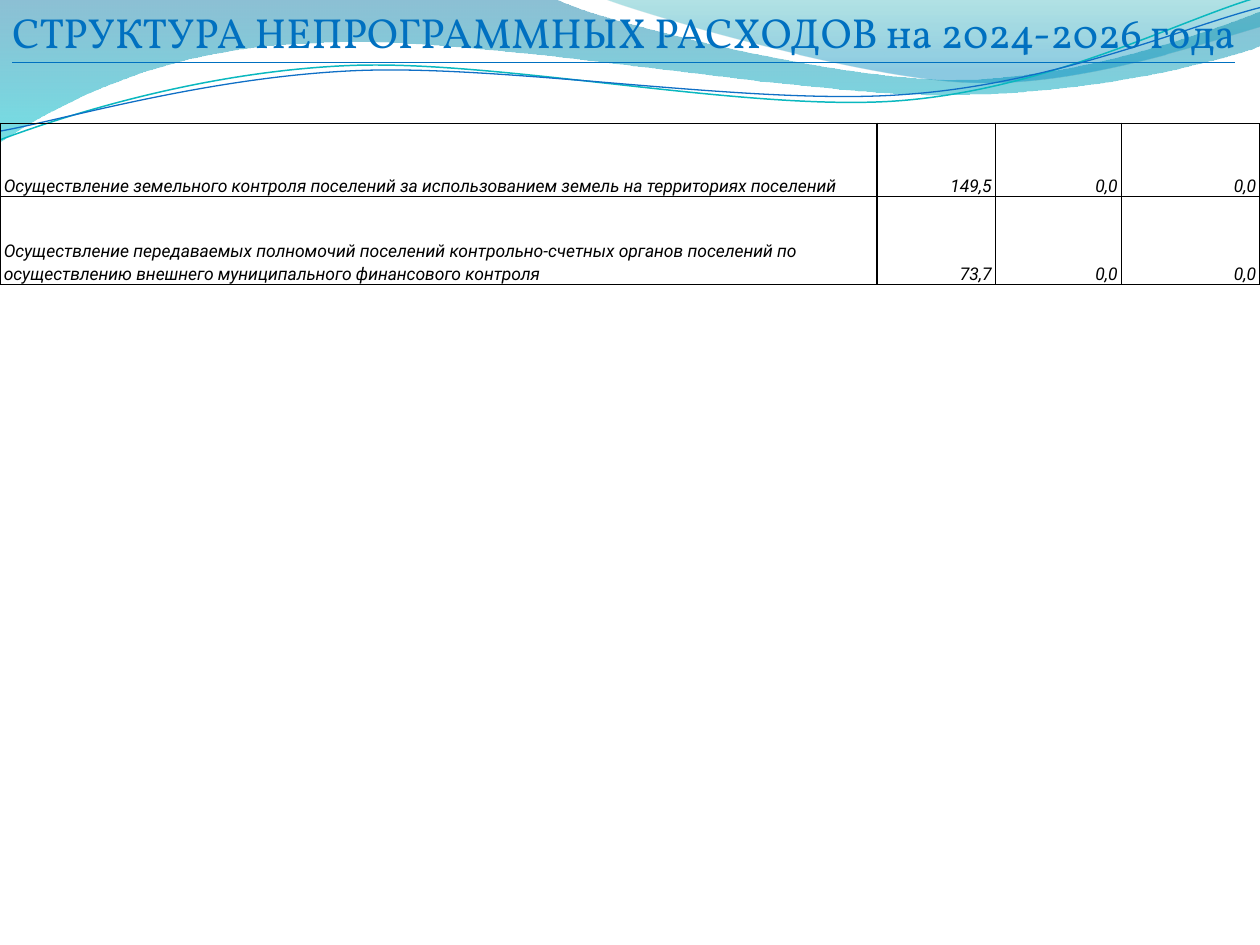
import math
from pptx import Presentation, util as u
from pptx.dml.color import RGBColor
from pptx.enum import text as t
from pptx.oxml import ns, xmlchemy as xml

PX = 9144
BLACK = RGBColor(0, 0, 0)
WHITE = RGBColor(255, 255, 255)
BLUE = RGBColor(0, 0x70, 0xC0)
TEAL = RGBColor(0x0A, 0xB8, 0xBF)
NAVY = RGBColor(0x0F, 0x6F, 0xC6)
DEEP = RGBColor(0, 0x74, 0xA1)
AQUA = RGBColor(0, 0xC6, 0xCF)
SEA = RGBColor(0, 0xA1, 0xA9)
SKY = RGBColor(0, 0x8B, 0xBF)

TILT = 357.3
BANDS = [
    ([(0, 0), (440, -1), (476, 17, 664, 63, 758, 63), (853, 63, 958, 26, 1000, 9),
      (1001, 36), (983, 44, 870, 76, 746, 75), (622, 75, 382, 28, 257, 34),
      (129, 36, 46, 83, -1, 113), (0, 0)], [(0, DEEP, 45), (1, AQUA, 55)]),
    ([(479, -1), (509, 11, 682, 62, 769, 65), (856, 69, 961, 32, 1000, 21),
      (1000, 0), (479, -1)], [(0, SEA, 30), (0.8, SKY, 45)]),
]
LINES = [
    ([(0, 111), (48, 93, 158, 57, 277, 52), (395, 47, 593, 89, 713, 80),
      (833, 71, 938, 15, 998, -2)], (499, 57), TEAL, 0.85),
    ([(0, 104), (47, 96, 164, 61, 283, 56), (403, 51, 597, 84, 717, 75),
      (836, 67, 941, 21, 1000, 6)], (499, 59), NAVY, 0.75),
]
TITLE = "СТРУКТУРА НЕПРОГРАММНЫХ РАСХОДОВ на 2024-2026 года"
COLS = [696, 94, 100, 110]
ROWS = [
    (58, None, ["Осуществление земельного контроля поселений за использованием земель "
                "на территориях поселений", "149,5", "0,0", "0,0"]),
    (70, WHITE, ["Осуществление передаваемых полномочий поселений контрольно-счетных "
                 "органов поселений по осуществлению внешнего муниципального "
                 "финансового контроля", "73,7", "0,0", "0,0"]),
]


def pairs(step):
    return list(zip(step[::2], step[1::2]))


def turn(step, mid, angle):
    c, s = math.cos(angle), math.sin(angle)
    flat = []
    for a, b in pairs(step):
        a, b = a - mid[0], b - mid[1]
        flat += [mid[0] + a * c - b * s, mid[1] + a * s + b * c]
    return tuple(flat)


def trace(slide, x, y, steps, close):
    dots = [(round((x + a) * PX), round((y + b) * PX))
            for step in steps for a, b in pairs(step)]
    pen = slide.shapes.build_freeform(*dots[0])
    pen.add_line_segments(dots[1:], close=close)
    shape = pen.convert_to_shape()
    shape.shadow.inherit = False
    legs = iter(list(shape._element.iter(ns.qn("a:lnTo"))))
    for step in steps[1:]:
        leg = next(legs)
        if len(step) == 6:
            bend = xml.OxmlElement("a:cubicBezTo")
            leg.addprevious(bend)
            for part in (leg, next(legs), next(legs)):
                bend.append(part[0])
                part.getparent().remove(part)
    return shape


def add_waves(slide, x, y):
    for steps, stops in BANDS:
        band = trace(slide, x, y, steps, True)
        band.line.fill.background()
        band.fill.gradient()
        band.fill.gradient_angle = 270
        for stop, (pos, color, alpha) in zip(band.fill.gradient_stops, stops):
            stop.position = pos
            stop.color.rgb = color
        tints = band._element.spPr.iter(ns.qn("a:srgbClr"))
        for tint, (pos, color, alpha) in zip(tints, stops):
            node = xml.OxmlElement("a:alpha")
            node.set("val", str(alpha * 1000))
            tint.append(node)
    for steps, mid, color, width in LINES:
        flat = [turn(step, mid, math.radians(360 - TILT)) for step in steps]
        line = trace(slide, x, y, flat, False)
        line.rotation = TILT
        line.fill.background()
        line.line.color.rgb = color
        line.line.width = u.Pt(width)


def style(run, face, size, color):
    run.font.name = face
    run.font.size = u.Pt(size)
    run.font.color.rgb = color


def add_title(slide, x, y, w, h):
    frame = slide.shapes.add_textbox(x * PX, y * PX, w * PX, h * PX).text_frame
    frame.word_wrap = True
    frame.text = TITLE
    run = frame.paragraphs[0].runs[0]
    style(run, "Vollkorn", 24, BLUE)
    run.font.underline = True


def add_edges(cell):
    props = cell._tc.get_or_add_tcPr()
    for side in ("lnL", "lnR", "lnT", "lnB"):
        edge = xml.OxmlElement("a:" + side)
        edge.set("w", str(u.Pt(1)))
        fill = xml.OxmlElement("a:solidFill")
        tint = xml.OxmlElement("a:srgbClr")
        tint.set("val", str(BLACK))
        fill.append(tint)
        edge.append(fill)
        props.append(edge)


def fill_cell(cell, words, fill, align):
    add_edges(cell)
    if fill is None:
        cell.fill.background()
    else:
        cell.fill.solid()
        cell.fill.fore_color.rgb = fill
    cell.margin_left = cell.margin_right = 3 * PX
    cell.margin_top = cell.margin_bottom = 0
    cell.vertical_anchor = t.MSO_ANCHOR.BOTTOM
    cell.text_frame.text = words
    para = cell.text_frame.paragraphs[0]
    para.alignment = align
    para.line_spacing = 1.15
    style(para.runs[0], "Roboto", 10, BLACK)
    para.runs[0].font.italic = True


def add_costs(slide, x, y, w, h):
    table = slide.shapes.add_table(len(ROWS), len(COLS), x * PX, y * PX,
                                   w * PX, h * PX).table
    table.first_row = table.horz_banding = False
    for col, width in zip(table.columns, COLS):
        col.width = width * PX
    for row, (high, fill, words) in zip(table.rows, ROWS):
        row.height = high * PX
        for i, (cell, word) in enumerate(zip(row.cells, words)):
            align = t.PP_ALIGN.RIGHT if i else t.PP_ALIGN.LEFT
            fill_cell(cell, word, fill, align)


def main():
    deck = Presentation()
    deck.slide_width, deck.slide_height = 1000 * PX, 750 * PX
    slide = deck.slides.add_slide(deck.slide_layouts[6])
    add_waves(slide, 0, 0)
    add_title(slide, 0, 0, 1000, 80)
    add_costs(slide, 0, 98, 1000, 128)
    deck.save("out.pptx")


if __name__ == "__main__":
    main()
